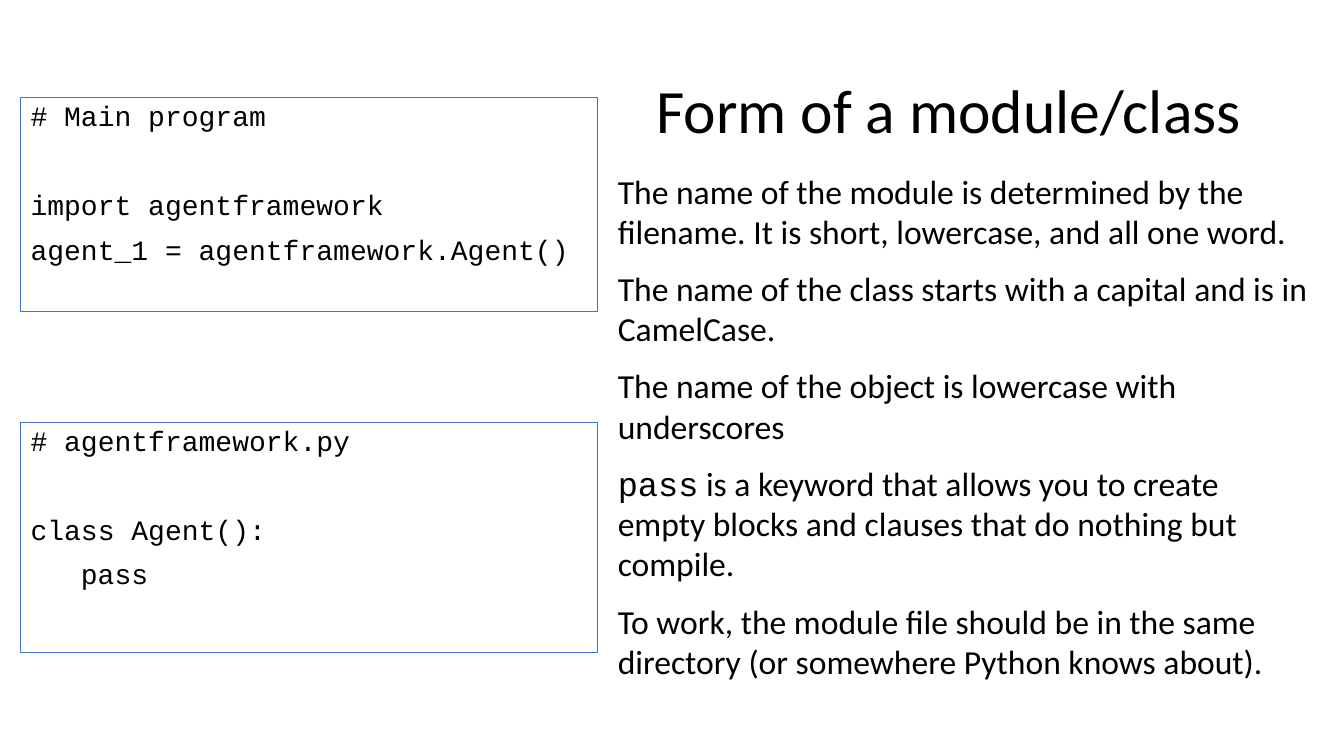
from pptx import Presentation
from pptx.dml.color import RGBColor
from pptx.enum.shapes import MSO_SHAPE
from pptx.enum.text import MSO_ANCHOR, PP_ALIGN
from pptx.util import Cm, Pt

BLACK = "000000"
BLUE = "4472C4"
BODY_FONT = "Calibri"
CODE_FONT = "Courier New"
LINE_GAP = 10
BLOCK_GAP = 42

MAIN_PROGRAM = [
    ("# Main program", LINE_GAP),
    ("import agentframework", BLOCK_GAP),
    ("agent_1 = agentframework.Agent()", LINE_GAP),
]
AGENT_MODULE = [
    ("# agentframework.py", LINE_GAP),
    ("class Agent():", BLOCK_GAP),
    ("\tpass", LINE_GAP),
]
NOTES = [
    [("The name of the module is determined by the filename. "
      "It is short, lowercase, and all one word.", BODY_FONT)],
    [("The name of the class starts with a capital and is in CamelCase.", BODY_FONT)],
    [("The name of the object is lowercase with underscores", BODY_FONT)],
    [("pass", CODE_FONT),
     (" is a keyword that allows you to create empty blocks and clauses "
      "that do nothing but compile.", BODY_FONT)],
    [("To work, the module file should be in the same directory "
      "(or somewhere Python knows about).", BODY_FONT)],
]


def color(value):
    return RGBColor.from_string(value)


def set_font(font, size, name=None):
    font.size = Pt(size)
    font.color.rgb = color(BLACK)
    if name:
        font.name = name


def add_paragraph(frame, index):
    return frame.add_paragraph() if index else frame.paragraphs[0]


def add_text_box(page, left, top, width, height):
    box = page.shapes.add_textbox(Cm(left), Cm(top), Cm(width), Cm(height))
    box.text_frame.word_wrap = True
    return box.text_frame


def add_title(page, text):
    frame = add_text_box(page, 2.33, 1.01, 29.21, 3.68)
    frame.vertical_anchor = MSO_ANCHOR.MIDDLE
    para = frame.paragraphs[0]
    para.text = text
    para.alignment = PP_ALIGN.RIGHT
    para.line_spacing = 0.9
    set_font(para.font, 44, BODY_FONT)


def add_code(page, top, height, lines):
    box = page.shapes.add_shape(
        MSO_SHAPE.RECTANGLE, Cm(0.52), Cm(top), Cm(14.54), Cm(height))
    box.shadow.inherit = False
    box.fill.background()
    box.line.color.rgb = color(BLUE)
    box.line.width = Pt(0.75)
    frame = box.text_frame
    frame.word_wrap = True
    frame.vertical_anchor = MSO_ANCHOR.TOP
    for index, (text, gap) in enumerate(lines):
        para = add_paragraph(frame, index)
        para.text = text
        para.alignment = PP_ALIGN.LEFT
        para.line_spacing = 0.9
        para.space_before = Pt(gap)
        set_font(para.font, 20, CODE_FONT)


def add_notes(page, notes):
    frame = add_text_box(page, 15.32, 4.17, 18.01, 13.26)
    for index, spans in enumerate(notes):
        para = add_paragraph(frame, index)
        para.space_after = Pt(12)
        set_font(para.font, 24)
        for text, font_name in spans:
            span = para.add_run()
            span.text = text
            span.font.name = font_name


def main():
    deck = Presentation()
    deck.slide_width = Cm(33.87)
    deck.slide_height = Cm(19.05)
    page = deck.slides.add_slide(deck.slide_layouts[6])
    add_title(page, "Form of a module/class")
    add_code(page, 2.46, 5.38, MAIN_PROGRAM)
    add_code(page, 10.64, 5.8, AGENT_MODULE)
    add_notes(page, NOTES)
    deck.save("out.pptx")


if __name__ == "__main__":
    main()
